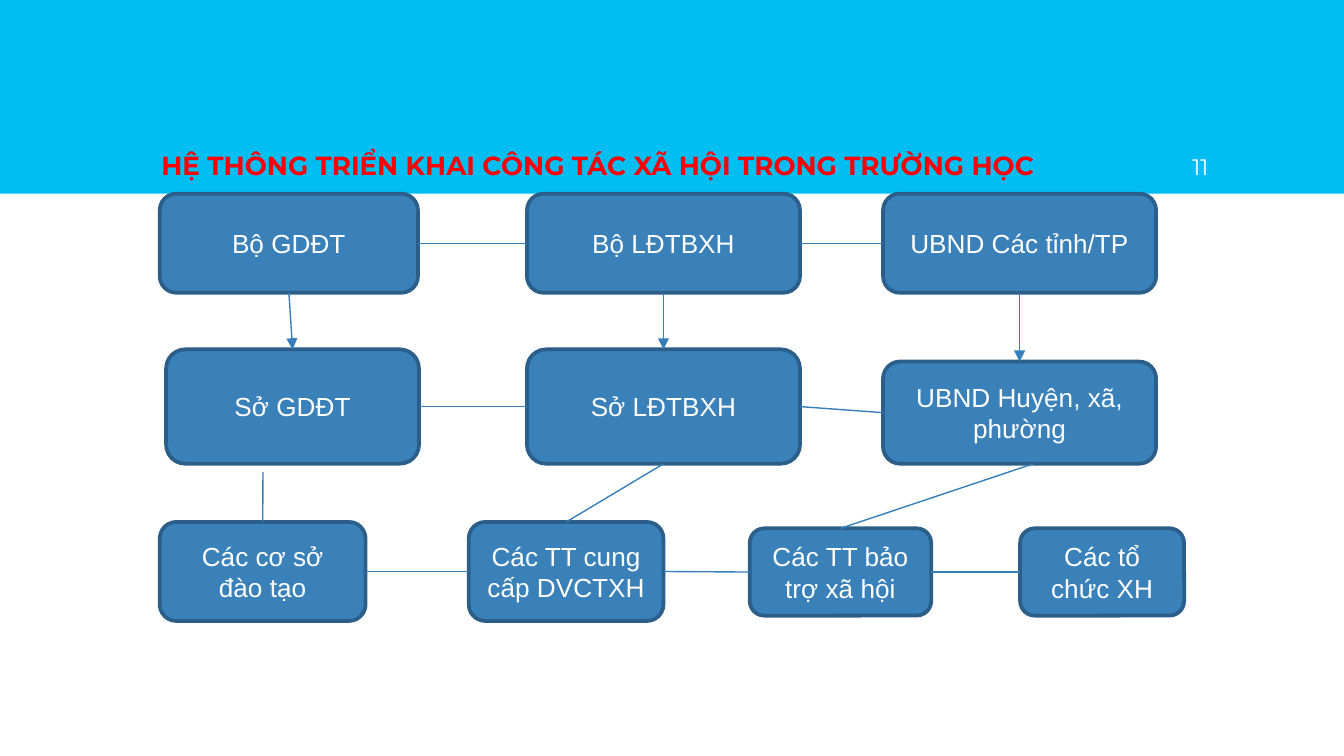
from lxml.etree import SubElement
from pptx import Presentation
from pptx.dml.color import RGBColor
from pptx.enum.shapes import MSO_CONNECTOR, MSO_SHAPE
from pptx.enum.text import MSO_ANCHOR, PP_ALIGN
from pptx.oxml.ns import qn
from pptx.util import Cm, Pt

COLORS = {
    "band": "00BEF2",
    "title": "FF0000",
    "white": "FFFFFF",
    "box": "3A81BA",
    "border": "2B5F8A",
    "link": "367EB9",
}
BOTTOM, LEFT, RIGHT, TOP = 2, 1, 3, 0


def color(name):
    return RGBColor.from_string(COLORS[name])


def write(shape, text, size, font, ink, align, anchor, bold=False):
    frame = shape.text_frame
    frame.word_wrap = True
    frame.vertical_anchor = anchor
    para = frame.paragraphs[0]
    para.alignment = align
    span = para.add_run()
    span.text = text
    span.font.size = Pt(size)
    span.font.name = font
    span.font.bold = bold
    span.font.color.rgb = color(ink)


deck = Presentation()
deck.slide_width, deck.slide_height = Cm(25.4), Cm(14.28)
page = deck.slides.add_slide(deck.slide_layouts[6])
shapes = page.shapes

# Header band, title and page number
band = shapes.add_shape(MSO_SHAPE.RECTANGLE, 0, 0, deck.slide_width, Cm(3.66))
band.shadow.inherit = False
band.fill.solid()
band.fill.fore_color.rgb = color("band")
band.line.fill.background()

headers = [
    ("HỆ THÔNG TRIỂN KHAI CÔNG TÁC XÃ HỘI TRONG TRƯỜNG HỌC",
     2.8, 19.8, 14, "title", PP_ALIGN.LEFT, True),
    ("11", 21.56, 1.53, 12, "white", PP_ALIGN.RIGHT, False),
]
for text, left, width, size, ink, align, bold in headers:
    box = shapes.add_textbox(Cm(left), Cm(1.8), Cm(width), Cm(1.86))
    frame = box.text_frame
    frame.margin_left = frame.margin_right = Cm(0.25)
    frame.margin_top = frame.margin_bottom = Cm(0.25)
    write(box, text, size, "Montserrat", ink, align, MSO_ANCHOR.BOTTOM, bold)

# Organisations: key, label, left, top, width, height in cm
organisations = [
    ("education ministry", "Bộ GDĐT", 3.02, 3.66, 4.88, 1.87),
    ("labour ministry", "Bộ LĐTBXH", 9.96, 3.66, 5.16, 1.87),
    ("province", "UBND Các tỉnh/TP", 16.69, 3.66, 5.16, 1.87),
    ("education office", "Sở GDĐT", 3.14, 6.6, 4.78, 2.16),
    ("labour office", "Sở LĐTBXH", 9.96, 6.6, 5.16, 2.16),
    ("district", "UBND Huyện, xã, phường", 16.69, 6.83, 5.16, 1.93),
    ("schools", "Các cơ sở đào tạo", 3.02, 9.86, 3.89, 1.87),
    ("service centres", "Các TT cung cấp DVCTXH", 8.86, 9.86, 3.68, 1.87),
    ("shelters", "Các TT bảo trợ xã hội", 14.17, 9.98, 3.43, 1.65),
    ("associations", "Các tổ chức XH", 19.28, 9.98, 3.1, 1.65),
]
boxes = {}
for key, label, *place in organisations:
    box = shapes.add_shape(MSO_SHAPE.ROUNDED_RECTANGLE, *map(Cm, place))
    box.shadow.inherit = False
    box.fill.solid()
    box.fill.fore_color.rgb = color("box")
    box.line.color.rgb = color("border")
    box.line.width = Pt(2)
    write(box, label, 14, "Arial", "white", PP_ALIGN.CENTER, MSO_ANCHOR.MIDDLE)
    boxes[key] = box

# Links: a start is a (box, side) pair, or a free point in cm
rows = [
    ["education ministry", "labour ministry", "province"],
    ["education office", "labour office", "district"],
    ["schools", "service centres", "shelters", "associations"],
]
links = []
for row in rows:
    for start, end in zip(row, row[1:]):
        links.append(((start, RIGHT), (end, LEFT), False))
for start, end in zip(rows[0], rows[1]):
    links.append(((start, BOTTOM), (end, TOP), True))
links += [
    ((4.97, 8.92), ("schools", TOP), False),
    (("labour office", BOTTOM), ("service centres", TOP), False),
    ((19.53, 8.76), ("shelters", TOP), False),
]
for start, (end, end_side), arrow in links:
    joined = start[0] in boxes
    origin = (0, 0) if joined else map(Cm, start)
    link = shapes.add_connector(MSO_CONNECTOR.STRAIGHT, *origin, 0, 0)
    if joined:
        link.begin_connect(boxes[start[0]], start[1])
    link.end_connect(boxes[end], end_side)
    link.line.color.rgb = color("link")
    link.line.width = Pt(0.75)
    if arrow:
        SubElement(link.line._get_or_add_ln(), qn("a:tailEnd"), type="triangle")
    SubElement(link._element.spPr, qn("a:effectLst"))

deck.save("out.pptx")
